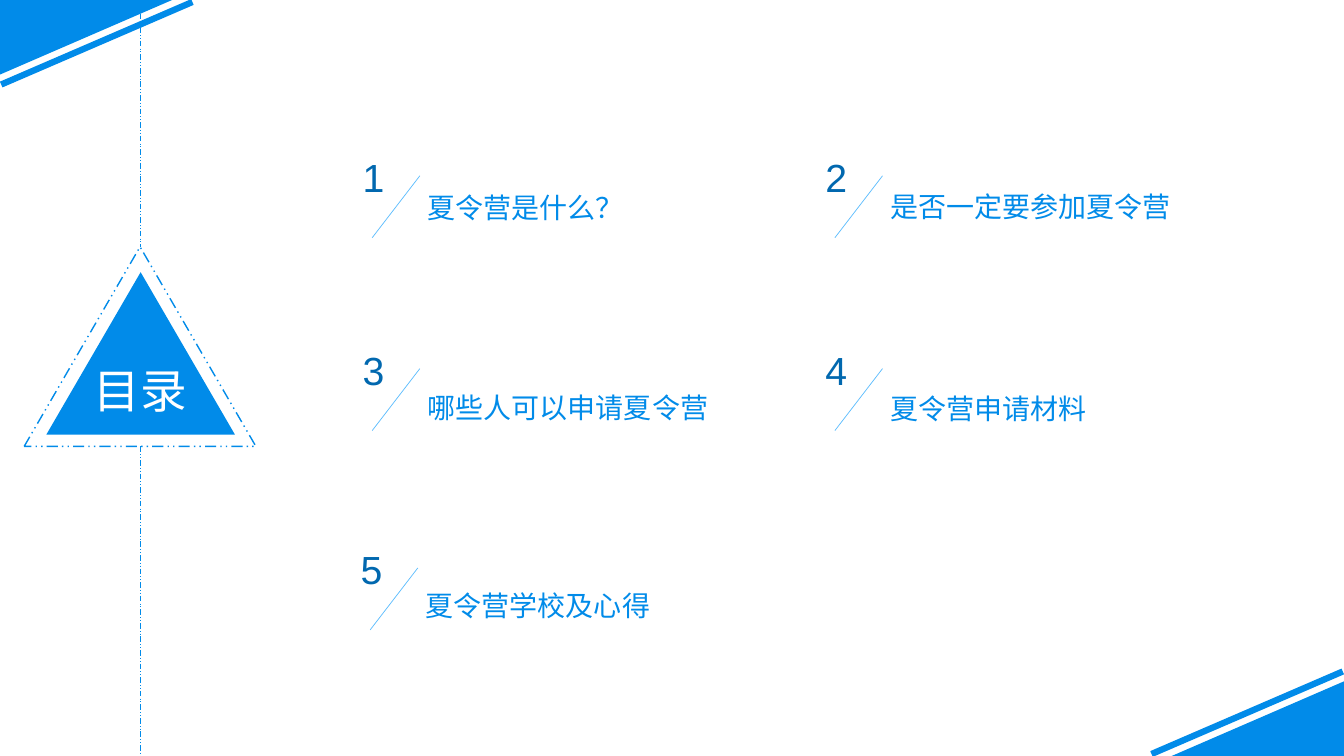
from dataclasses import dataclass

from lxml import etree
from pptx import Presentation
from pptx.dml.color import RGBColor
from pptx.enum import dml, shapes, text
from pptx.oxml import ns
from pptx.shapes.autoshape import Shape
from pptx.slide import Slide
from pptx.util import Cm, Pt

WIDTH, HEIGHT = 33.87, 19.05
Point = tuple[float, float]


@dataclass(frozen=True)
class Theme:
    font: str = "Arial"
    blue: str = "018BE9"
    dark_blue: str = "0168AF"
    light_blue: str = "5ABCFE"
    white: str = "FFFFFF"
    title_size: float = 33.3
    number_size: float = 28
    caption_size: float = 20
    thin: float = 0.5
    outline: float = 1
    band: float = 4.5


@dataclass(frozen=True)
class Entry:
    """A contents entry; left and top place its number, drop its caption."""
    number: str
    caption: str
    left: float
    top: float
    drop: float


THEME = Theme()
ENTRIES = (
    Entry("1", "夏令营是什么？", 8.89, 3.73, 0.71),
    Entry("2", "是否一定要参加夏令营", 20.55, 3.73, 0.69),
    Entry("3", "哪些人可以申请夏令营", 8.89, 8.59, 0.89),
    Entry("4", "夏令营申请材料", 20.55, 8.59, 0.91),
    Entry("5", "夏令营学校及心得", 8.84, 13.61, 0.86),
)


def colour(code: str) -> RGBColor:
    return RGBColor.from_string(code)


def fill_plain(shape: Shape, code: str) -> None:
    shape.shadow.inherit = False
    shape.fill.solid()
    shape.fill.fore_color.rgb = colour(code)
    shape.line.fill.background()


def add_line(slide: Slide, start: Point, end: Point, code: str,
             width: float, dashed: bool = False) -> None:
    connector = slide.shapes.add_connector(
        shapes.MSO_CONNECTOR.STRAIGHT, *map(Cm, start + end))
    connector.line.color.rgb = colour(code)
    connector.line.width = Pt(width)
    if dashed:
        connector.line.dash_style = dml.MSO_LINE.DASH_DOT_DOT
    etree.SubElement(connector._element.spPr, ns.qn("a:effectLst"))


def set_text(shape: Shape, words: str, size: float, code: str) -> None:
    shape.text_frame.text = words
    font = shape.text_frame.paragraphs[0].runs[0].font
    font.name = THEME.font
    font.size = Pt(size)
    font.color.rgb = colour(code)


def add_corner(slide: Slide, turned: bool) -> None:
    """Draw the top-left corner, or the same turned to the bottom right."""
    def place(x: float, y: float) -> Point:
        return (WIDTH - x, HEIGHT - y) if turned else (x, y)

    first, *others = [tuple(map(Cm, place(x, y)))
                      for x, y in ((0, 1.88), (0, 0), (4.34, 0))]
    builder = slide.shapes.build_freeform(*first)
    builder.add_line_segments(others, close=True)
    fill_plain(builder.convert_to_shape(), THEME.blue)
    add_line(slide, place(0.03, 2.13), place(4.85, 0.05),
             THEME.blue, THEME.band)


def add_entry(slide: Slide, entry: Entry) -> None:
    left, top = entry.left, entry.top
    caption = slide.shapes.add_textbox(
        Cm(left + 1.64), Cm(top + entry.drop), Cm(8.59), Cm(1.57))
    caption.text_frame.word_wrap = True
    caption.text_frame.vertical_anchor = text.MSO_ANCHOR.MIDDLE
    set_text(caption, entry.caption, THEME.caption_size, THEME.blue)

    add_line(slide, (left + 1.69, top + 0.7), (left + 0.49, top + 2.26),
             THEME.light_blue, THEME.thin)

    number = slide.shapes.add_textbox(Cm(left), Cm(top), Cm(0.94), Cm(1.88))
    number.text_frame.word_wrap = True
    set_text(number, entry.number, THEME.number_size, THEME.dark_blue)


def add_triangle(slide: Slide, left: float, top: float,
                 width: float, height: float) -> Shape:
    return slide.shapes.add_shape(
        shapes.MSO_SHAPE.ISOSCELES_TRIANGLE,
        Cm(left), Cm(top), Cm(width), Cm(height))


def add_title_badge(slide: Slide) -> None:
    fill_plain(add_triangle(slide, 1.17, 6.86, 4.75, 4.09), THEME.blue)

    title = slide.shapes.title
    slide.shapes._spTree.append(title._element)  # in front of the triangle
    title.left, title.top = Cm(2.04), Cm(8.9)
    title.width, title.height = Cm(3), Cm(2.05)
    frame = title.text_frame
    frame.auto_size = text.MSO_AUTO_SIZE.NONE
    frame.vertical_anchor = text.MSO_ANCHOR.MIDDLE
    frame.margin_left = frame.margin_right = frame.margin_top = 0
    frame.margin_bottom = Cm(0.18)
    set_text(title, "目录", THEME.title_size, THEME.white)
    frame.paragraphs[0].alignment = text.PP_ALIGN.CENTER

    outline = add_triangle(slide, 0.61, 6.22, 5.84, 5.03)
    outline.shadow.inherit = False
    outline.fill.background()
    outline.line.color.rgb = colour(THEME.blue)
    outline.line.width = Pt(THEME.outline)
    outline.line.dash_style = dml.MSO_LINE.DASH_DOT_DOT

    for start, end in ((0, 6.22), (11.25, HEIGHT)):
        add_line(slide, (3.53, start), (3.53, end),
                 THEME.blue, THEME.thin, dashed=True)


def main() -> None:
    presentation = Presentation()
    presentation.slide_width = Cm(WIDTH)
    presentation.slide_height = Cm(HEIGHT)
    slide = presentation.slides.add_slide(
        presentation.slide_layouts.get_by_name("Title Only"))
    for turned in (True, False):
        add_corner(slide, turned)
    for entry in ENTRIES:
        add_entry(slide, entry)
    add_title_badge(slide)
    presentation.save("out.pptx")


if __name__ == "__main__":
    main()
